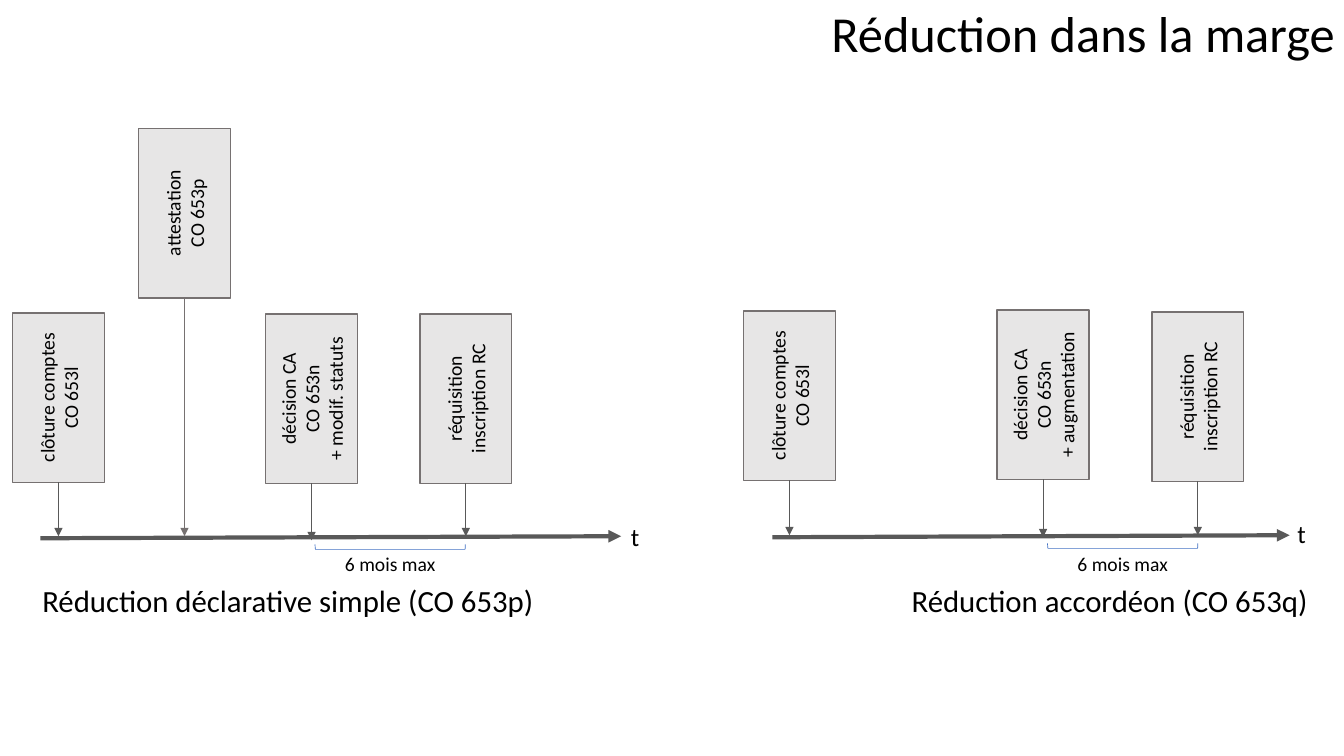
from dataclasses import dataclass

from lxml.etree import SubElement
from pptx import Presentation
from pptx.dml.color import RGBColor
from pptx.enum.shapes import MSO_CONNECTOR, MSO_SHAPE
from pptx.enum.text import MSO_ANCHOR, MSO_AUTO_SIZE, PP_ALIGN
from pptx.oxml.ns import qn
from pptx.shapes.autoshape import Shape
from pptx.slide import Slide
from pptx.text.text import TextFrame
from pptx.util import Inches, Length, Pt


@dataclass(frozen=True)
class Theme:
    font: str = "Calibri"
    ink: str = "000000"
    box_fill: str = "E7E6E6"
    box_edge: str = "767171"
    arrow: str = "595959"
    bracket: str = "4472C4"
    title: int = 36
    caption: int = 22
    axis_label: int = 18
    label: int = 14
    thick: float = 3
    medium: float = 1
    thin: float = 0.5


THEME = Theme()
# Grid of square cells, ten to the inch; all positions are columns and rows.
COLUMNS, ROWS = 133.3, 75
BOX_LENGTH, BOX_DEPTH = 16.8, 9.1
BRACKET_LENGTH, BRACKET_DEPTH = 14.9, 0.5


def cells(count: float) -> Length:
    return Inches(count / 10)


@dataclass(frozen=True)
class Event:
    """A step: its column, the row of its box centre and the row of its arrow tip."""
    text: str
    column: float
    row: float
    tip: float
    stem: str = THEME.arrow


@dataclass(frozen=True)
class Timeline:
    """One procedure; columns count from origin, except in the caption."""
    origin: float
    baseline: float
    axis_start: float
    axis_end: float
    axis_label: tuple[float, float]
    deadline: float
    caption: str
    caption_left: float
    caption_width: float
    align: PP_ALIGN
    events: tuple[Event, ...]


CLOSING = "clôture comptes\nCO 653l"
DECISION = "décision CA\nCO 653n\n"
FILING = "réquisition inscription RC"

TIMELINES = (
    Timeline(0, 53.4, 4, 61.6, (61.6, 51.2), 38.7,
             "Réduction déclarative simple (CO 653p)", 3.2, 59.6, PP_ALIGN.LEFT, (
                 Event(CLOSING, 5.8, 39.45, 53.2),
                 Event("attestation\nCO 653p", 18.3, 21.15, 53.2, THEME.box_edge),
                 Event(DECISION + "+ modif. statuts", 30.9, 39.55, 53.6),
                 Event(FILING, 46.2, 39.55, 53.2))),
    Timeline(72.5, 53.3, 4.1, 55.4, (55.2, 50.9), 38.85,
             "Réduction accordéon (CO 653q)", 73.8, 56.9, PP_ALIGN.RIGHT, (
                 Event(CLOSING, 5.8, 39.25, 53.1),
                 Event(DECISION + "+ augmentation", 30.95, 39.15, 53.3),
                 Event(FILING, 46.3, 39.35, 53.1))),
)


def write(frame: TextFrame, text: str, *, size: int, align: PP_ALIGN = PP_ALIGN.LEFT,
          anchor: MSO_ANCHOR = MSO_ANCHOR.TOP, wrap: bool = True,
          spacing: float = 1.0) -> None:
    """Fill a frame with one unbulleted paragraph per line of text."""
    frame.text = text
    frame.word_wrap = wrap
    frame.auto_size = MSO_AUTO_SIZE.NONE if wrap else MSO_AUTO_SIZE.SHAPE_TO_FIT_TEXT
    frame.vertical_anchor = anchor
    for paragraph in frame.paragraphs:
        paragraph.alignment = align
        paragraph.line_spacing = spacing
        paragraph.space_before = Pt(0)
        properties = paragraph._p.get_or_add_pPr()
        properties.set("marL", "0")
        properties.set("indent", "0")
        SubElement(properties, qn("a:buNone"))
        for run in paragraph.runs:
            run.font.name = THEME.font
            run.font.size = Pt(size)
            run.font.color.rgb = RGBColor.from_string(THEME.ink)


def fill_placeholder(holder: Shape, text: str, left: float, top: float, width: float,
                     size: int, align: PP_ALIGN) -> None:
    holder.left, holder.top = cells(left), cells(top)
    holder.width, holder.height = cells(width), cells(10.7)
    write(holder.text_frame, text, size=size, align=align, spacing=0.9)


def add_label(slide: Slide, text: str, left: float, top: float, width: float,
              height: float, size: int, align: PP_ALIGN) -> None:
    label = slide.shapes.add_textbox(cells(left), cells(top), cells(width), cells(height))
    write(label.text_frame, text, size=size, align=align, wrap=False)


def add_arrow(slide: Slide, start: tuple[float, float], end: tuple[float, float],
              color: str, weight: float) -> None:
    arrow = slide.shapes.add_connector(MSO_CONNECTOR.STRAIGHT, *map(cells, start + end))
    arrow.line.color.rgb = RGBColor.from_string(color)
    arrow.line.width = Pt(weight)
    properties = arrow.element.spPr
    SubElement(properties.find(qn("a:ln")), qn("a:tailEnd"), type="triangle")
    SubElement(properties, qn("a:effectLst"))


def add_upright(slide: Slide, kind: MSO_SHAPE, column: float, row: float, width: float,
                height: float, color: str, weight: float) -> Shape:
    """Add an outlined shape centred on a cell and turned a quarter to the left."""
    shape = slide.shapes.add_shape(kind, cells(column - width / 2), cells(row - height / 2),
                                   cells(width), cells(height))
    shape.rotation = 270
    shape.shadow.inherit = False
    shape.fill.background()
    shape.line.color.rgb = RGBColor.from_string(color)
    shape.line.width = Pt(weight)
    return shape


def draw_event(slide: Slide, event: Event, origin: float) -> None:
    column = origin + event.column
    box = add_upright(slide, MSO_SHAPE.RECTANGLE, column, event.row, BOX_LENGTH, BOX_DEPTH,
                      THEME.box_edge, THEME.medium)
    box.fill.solid()
    box.fill.fore_color.rgb = RGBColor.from_string(THEME.box_fill)
    write(box.text_frame, event.text, size=THEME.label, align=PP_ALIGN.CENTER,
          anchor=MSO_ANCHOR.MIDDLE)
    add_arrow(slide, (column, event.row + BOX_LENGTH / 2), (column, event.tip),
              event.stem, THEME.thin)


def draw_timeline(slide: Slide, timeline: Timeline, caption: Shape) -> None:
    origin, baseline = timeline.origin, timeline.baseline
    add_arrow(slide, (origin + timeline.axis_start, baseline),
              (origin + timeline.axis_end, baseline - 0.2), THEME.arrow, THEME.thick)
    label_column, label_row = timeline.axis_label
    add_label(slide, "t", origin + label_column, label_row, 2.9, 4, THEME.axis_label,
              PP_ALIGN.LEFT)
    for event in timeline.events:
        draw_event(slide, event, origin)
    deadline = origin + timeline.deadline
    add_upright(slide, MSO_SHAPE.LEFT_BRACKET, deadline, baseline + 0.85, BRACKET_DEPTH,
                BRACKET_LENGTH, THEME.bracket, THEME.thin)
    add_label(slide, "6 mois max", deadline - 5.55, 54.3, 11.1, 3.4, THEME.label,
              PP_ALIGN.CENTER)
    fill_placeholder(caption, timeline.caption, timeline.caption_left, 57.6,
                     timeline.caption_width, THEME.caption, timeline.align)


def main() -> None:
    deck = Presentation()
    deck.slide_width, deck.slide_height = cells(COLUMNS), cells(ROWS)
    slide = deck.slides.add_slide(deck.slide_layouts.get_by_name("Two Content"))
    fill_placeholder(slide.shapes.title, "Réduction dans la marge", 7.5, 0.4, 125.9,
                     THEME.title, PP_ALIGN.RIGHT)
    captions = (slide.placeholders[1], slide.placeholders[2])
    for timeline, caption in zip(TIMELINES, captions):
        draw_timeline(slide, timeline, caption)
    deck.save("out.pptx")


if __name__ == "__main__":
    main()
